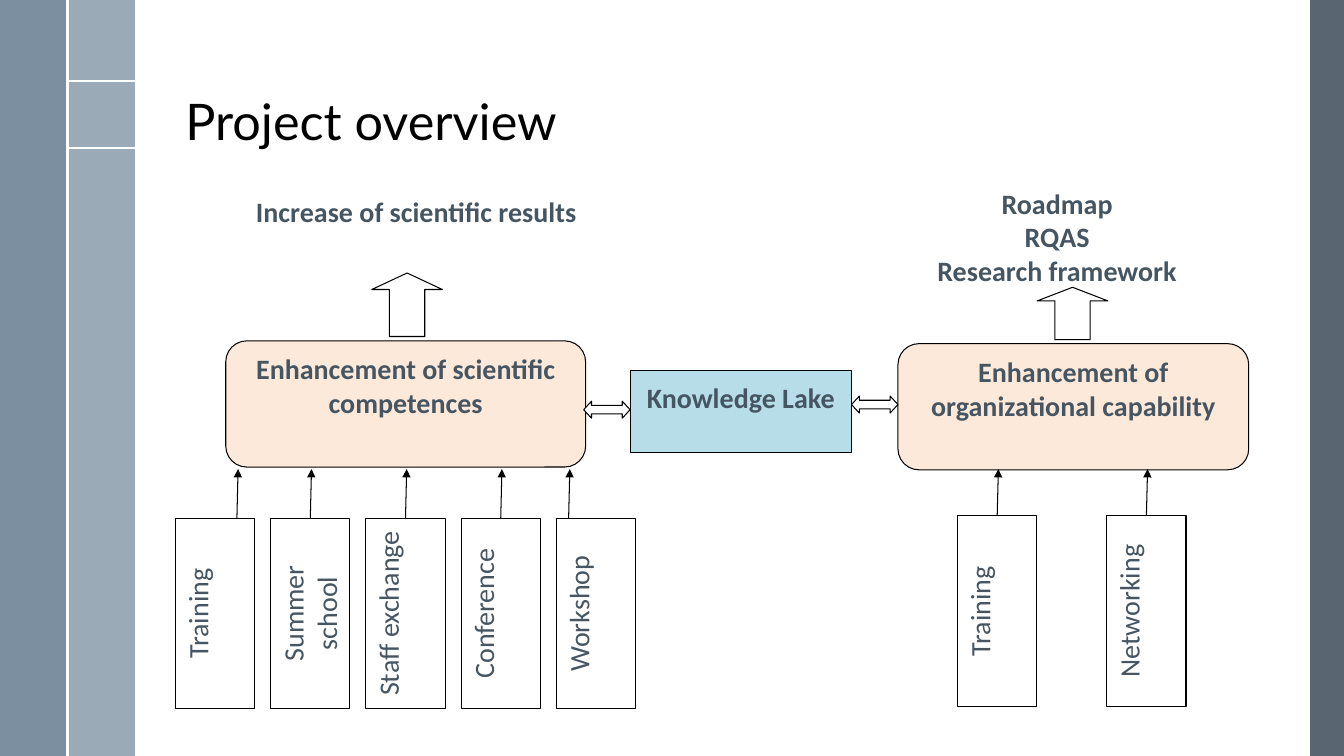
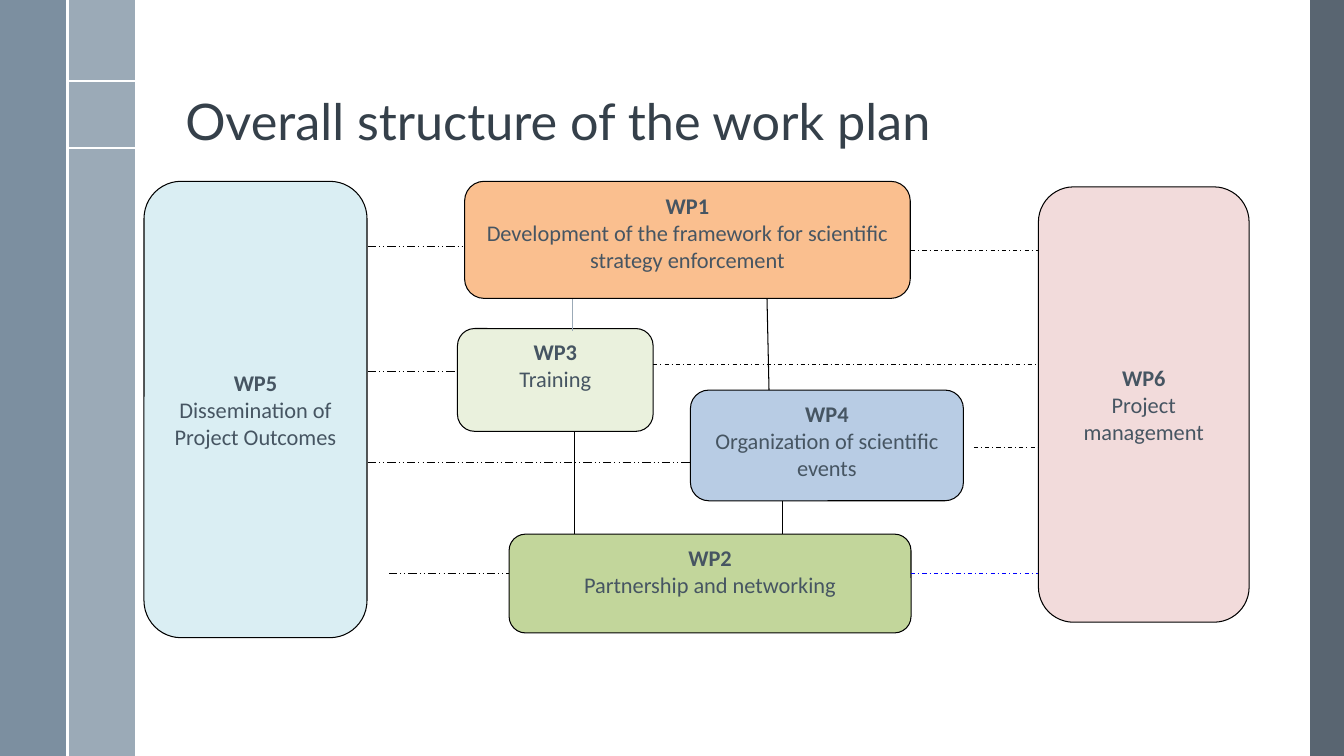
"""Builds the project overview and work plan slides."""
from dataclasses import dataclass

from lxml import etree
from pptx import Presentation
from pptx import util as u
from pptx.dml.color import RGBColor
from pptx.enum import dml, shapes, text
from pptx.oxml import ns


@dataclass(frozen=True)
class Theme:
    ink: str = "465562"
    black: str = "000000"
    white: str = "FFFFFF"
    blue: str = "0000FF"
    slate: str = "35404A"
    dark: str = "475562"
    mid: str = "6A8093"
    pale: str = "9BAAB7"
    cream: str = "FDE9D9"
    lake: str = "B6DDE8"
    orange: str = "FABF8F"
    sky: str = "DAEEF3"
    rose: str = "F2DBDB"
    green: str = "C2D69B"
    mint: str = "EAF1DD"
    steel: str = "B8CCE4"
    head: str = "Lato"
    body: str = "Calibri"
    title: int = 36
    large: int = 20
    small: int = 16
    thin: float = 0.75


T = Theme()
KIND = shapes.MSO_SHAPE
DASH = dml.MSO_LINE
TOP, MID = text.MSO_ANCHOR.TOP, text.MSO_ANCHOR.MIDDLE


def box(slide, kind, area, fill, lines=(), size=T.large, edge=T.black,
        alpha=None, anchor=TOP):
    """Draw a shape; lines holds pairs of wording and boldness."""
    shape = slide.shapes.add_shape(kind, *map(u.Cm, area))
    shape.shadow.inherit = False
    shape.fill.solid()
    shape.fill.fore_color.rgb = RGBColor.from_string(fill)
    if alpha:
        tint = shape._element.spPr.find(".//" + ns.qn("a:srgbClr"))
        etree.SubElement(tint, ns.qn("a:alpha"), val=str(alpha * 1000))
    if edge:
        shape.line.color.rgb = RGBColor.from_string(edge)
        shape.line.width = u.Pt(T.thin)
    else:
        shape.line.fill.background()
    frame = shape.text_frame
    frame.word_wrap = True
    frame.vertical_anchor = anchor
    for i, (words, bold) in enumerate(lines):
        para = frame.add_paragraph() if i else frame.paragraphs[0]
        para.text = words
        para.alignment = text.PP_ALIGN.CENTER
        para.font.name, para.font.size, para.font.bold = T.body, u.Pt(size), bold
        para.font.color.rgb = RGBColor.from_string(T.ink)
    return shape


def link(slide, ends, color=T.black, width=T.thin, dash=None, tip=False):
    """Draw a straight line, with an arrowhead if tip is set."""
    line = slide.shapes.add_connector(shapes.MSO_CONNECTOR.STRAIGHT, *map(u.Cm, ends))
    line.line.color.rgb = RGBColor.from_string(color)
    line.line.width = u.Pt(width)
    if dash:
        line.line.dash_style = dash
    props = line._element.spPr
    if tip:
        etree.SubElement(props.find(ns.qn("a:ln")), ns.qn("a:tailEnd"), type="triangle")
    etree.SubElement(props, ns.qn("a:effectLst"))
    return line


deck = Presentation()
deck.slide_width, deck.slide_height = u.Cm(33.87), u.Cm(19.05)

pages = []
for name, color in (("Project overview", T.black),
                    ("Overall structure of the work plan", T.slate)):
    page = deck.slides.add_slide(deck.slide_layouts[6])
    for left, width, fill, alpha in ((33.02, 0.85, T.dark, 90),
                                     (1.7, 1.7, T.pale, None),
                                     (0, 1.7, T.mid, 88)):
        box(page, KIND.RECTANGLE, (left, 0, width, 19.05), fill, edge=None, alpha=alpha)
    for ends in ((1.7, 2.05, 3.4, 2.05), (1.7, 3.73, 3.4, 3.73), (1.7, 0, 1.7, 19.05)):
        link(page, ends, T.white, 1.5)
    frame = page.shapes.add_textbox(*map(u.Cm, (4.42, 0.48, 27.18, 3.45))).text_frame
    frame.word_wrap = True
    frame.vertical_anchor = text.MSO_ANCHOR.BOTTOM
    para = frame.paragraphs[0]
    para.text = name
    para.line_spacing = 0.9
    para.font.name, para.font.size = T.head, u.Pt(T.title)
    para.font.color.rgb = RGBColor.from_string(color)
    pages.append(page)
view, plan = pages

for area, goal in (((5.69, 8.59, 9.07, 3.18), "Enhancement of scientific competences"),
                   ((22.63, 8.66, 8.84, 3.18), "Enhancement of organizational capability")):
    box(view, KIND.ROUNDED_RECTANGLE, area, T.cream, [(goal, True)])
lake = box(view, KIND.RECTANGLE, (15.88, 9.33, 5.58, 2.08), T.lake,
           [("Knowledge Lake", True)])
lake.text_frame.margin_top = u.Cm(0.25)
lake.text_frame.margin_left = lake.text_frame.margin_right = u.Cm(0.13)

for area, goals in (((4.7, 4.78, 11.58, 2.16), ["Increase of scientific results"]),
                    ((21.79, 4.57, 9.7, 3.2), ["Roadmap", "RQAS", "Research framework"])):
    box(view, KIND.RECTANGLE, area, T.white, [(goal, True) for goal in goals], edge=None)

for kind, area, barb in ((KIND.UP_ARROW, (9.37, 6.88, 1.78, 1.6), 0.26),
                         (KIND.UP_ARROW, (26.14, 7.24, 1.78, 1.32), 0.26),
                         (KIND.LEFT_RIGHT_ARROW, (21.46, 9.98, 1.17, 0.43), 0.46),
                         (KIND.LEFT_RIGHT_ARROW, (14.71, 10.11, 1.17, 0.43), 0.46)):
    arrow = box(view, kind, area, T.white)
    arrow.adjustments[0], arrow.adjustments[1] = 0.5, barb

tasks = ("Training", "Summer school", "Staff exchange", "Conference", "Workshop")
shift = (0.55, 0, 0, 0, -0.69)
inputs = [(4.42 + 2.4 * i, 13.06, task, shift[i]) for i, task in enumerate(tasks)]
inputs += [(24.13, 13, "Training", 0), (27.89, 13, "Networking", 0)]
for left, top, task, off in inputs:
    card = box(view, KIND.RECTANGLE, (left, top, 2, 4.8), T.white, [(task, False)])
    card.text_frame._txBody.bodyPr.set("vert", "vert270")
    x = left + 1 + off
    arrow = link(view, (x, top, x + 0.03, 11.82), tip=True)
    if not off:
        arrow.begin_connect(card, 0)

for area, fill, code, task, anchor in (
        ((11.71, 4.57, 11.23, 2.95), T.orange, "WP1",
         "Development of the framework for scientific strategy enforcement", TOP),
        ((3.63, 4.57, 5.62, 11.5), T.sky, "WP5", "Dissemination of Project Outcomes", MID),
        ((26.17, 4.71, 5.31, 10.97), T.rose, "WP6", "Project management", MID),
        ((12.83, 13.46, 10.13, 2.49), T.green, "WP2", "Partnership and networking", TOP),
        ((11.53, 8.28, 4.93, 2.59), T.mint, "WP3", "Training", TOP),
        ((17.4, 9.83, 6.88, 2.79), T.steel, "WP4", "Organization of scientific events", TOP)):
    box(plan, KIND.ROUNDED_RECTANGLE, area, fill, [(code, True), (task, False)],
        T.small, anchor=anchor)

for left, right, y in ((9.27, 11.71, 6.22), (9.27, 11.53, 9.35),
                       (9.27, 17.4, 11.66), (9.8, 12.83, 14.45)):
    link(plan, (left, y, right, y), dash=DASH.DASH_DOT_DOT)
for left, y, color in ((22.96, 6.3, T.black), (16.46, 9.19, T.black),
                       (24.54, 11.28, T.black), (22.96, 14.45, T.blue)):
    link(plan, (left, y, 26.16, y), color, dash=DASH.DASH_DOT)
for ends in ((19.33, 7.52, 19.38, 9.83), (14.48, 10.87, 14.48, 13.46),
             (19.71, 12.62, 19.71, 13.46)):
    link(plan, ends)
link(plan, (14.43, 7.54, 14.43, 8.33), T.pale, 0.5)

deck.save("out.pptx")
